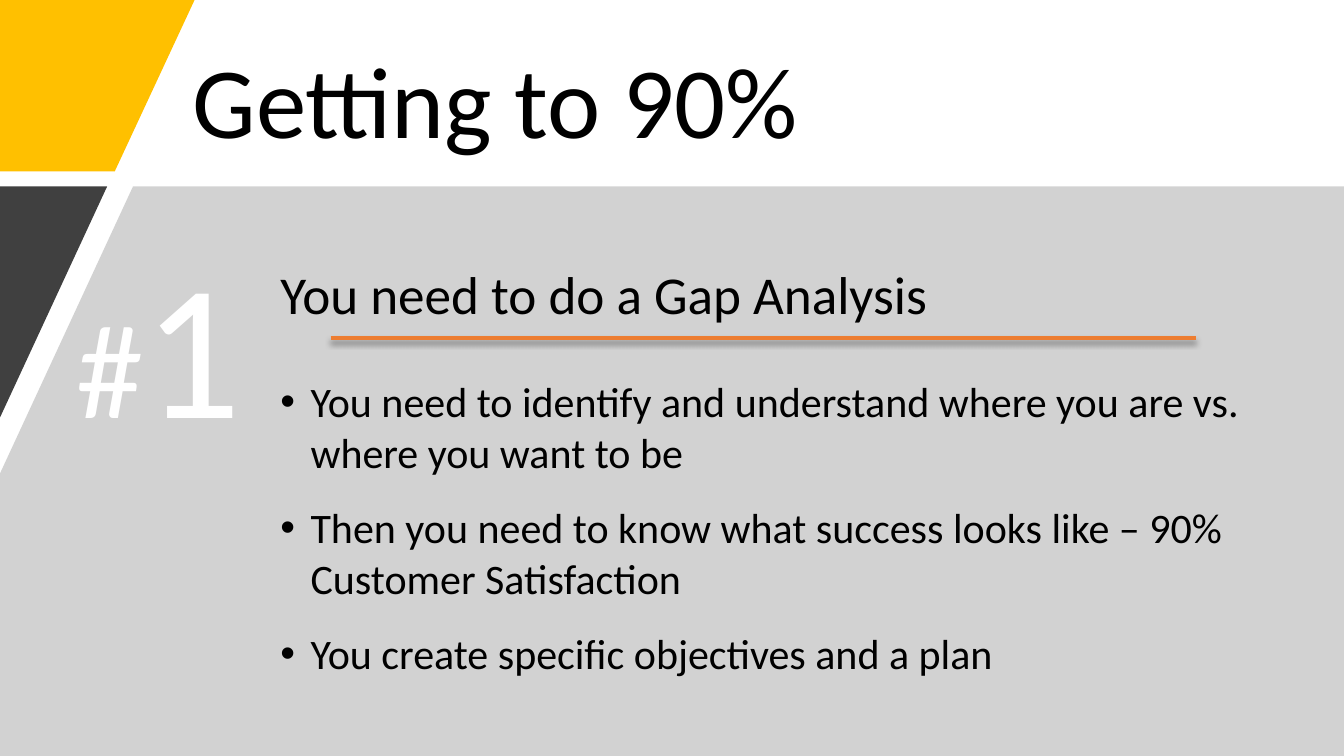
from lxml import etree
from pptx import Presentation
from pptx.dml.color import RGBColor
from pptx.enum.shapes import MSO_CONNECTOR
from pptx.enum.text import MSO_ANCHOR, MSO_AUTO_SIZE, PP_ALIGN
from pptx.oxml import parse_xml
from pptx.oxml.ns import nsdecls, qn
from pptx.util import Pt

STRAIGHT = MSO_CONNECTOR.STRAIGHT
MIDDLE, TOP = MSO_ANCHOR.MIDDLE, MSO_ANCHOR.TOP
NO_AUTOFIT, GROW = MSO_AUTO_SIZE.NONE, MSO_AUTO_SIZE.SHAPE_TO_FIT_TEXT
LEFT = PP_ALIGN.LEFT

BLACK = RGBColor(0x00, 0x00, 0x00)
WHITE = RGBColor(0xFF, 0xFF, 0xFF)
GOLD = RGBColor(0xFF, 0xC0, 0x00)
GRAY = RGBColor(0xA6, 0xA6, 0xA6)
CHARCOAL = RGBColor(0x40, 0x40, 0x40)
ORANGE = RGBColor(0xED, 0x7D, 0x31)
FONT = "Calibri"
WIDTH, HEIGHT = 960, 540

HEADING = "You need to do a Gap Analysis"
BULLETS = [
    "You need to identify and understand where you are vs. where you want to be",
    "Then you need to know what success looks like – 90% Customer Satisfaction",
    "You create specific objectives and a plan",
]


def place(shape, box):
    shape.left, shape.top, shape.width, shape.height = map(Pt, box)


def style_run(run, size, color):
    run.font.name = FONT
    run.font.size = Pt(size)
    run.font.color.rgb = color


def add_polygon(slide, box, corners, color, opacity=None):
    left, top, width, height = box
    points = [(Pt(left + x * width), Pt(top + y * height)) for x, y in corners]
    builder = slide.shapes.build_freeform(*points[0])
    builder.add_line_segments(points[1:], close=True)
    shape = builder.convert_to_shape()
    shape.shadow.inherit = False
    shape.fill.solid()
    shape.fill.fore_color.rgb = color
    shape.line.fill.background()
    if opacity is not None:
        fill_color = shape.fill._xPr.find(qn("a:solidFill"))[0]
        etree.SubElement(fill_color, qn("a:alpha")).set("val", str(opacity * 1000))


def add_background(slide, box):
    left, top, width, height = box
    panel_top = top + 133.2
    panel_height = height - 133.2
    add_polygon(slide, (left, top, 139, 122.4),
                [(0, 0), (1, 0), (0.59, 1), (0, 1)], GOLD)
    add_polygon(slide, (left, panel_top, width, panel_height),
                [(95 / width, 0), (1, 0), (1, 1), (0, 1), (0, 205 / panel_height)],
                GRAY, 50)
    add_polygon(slide, (left, panel_top, 76.5, 165),
                [(0, 0), (1, 0), (0, 1)], CHARCOAL)


def fill_title(slide, box):
    title = slide.shapes.title
    place(title, box)
    frame = title.text_frame
    frame.text = "Getting to 90%"
    frame.auto_size = NO_AUTOFIT
    frame.vertical_anchor = MIDDLE
    paragraph = frame.paragraphs[0]
    paragraph.alignment = LEFT
    paragraph.line_spacing = 0.9
    style_run(paragraph.runs[0], 72, BLACK)


def format_paragraph(paragraph, size, before, bullet=None):
    paragraph.alignment = LEFT
    paragraph.space_before = Pt(before)
    paragraph.space_after = Pt(12)
    style_run(paragraph.runs[0], size, BLACK)
    properties = paragraph._p.get_or_add_pPr()
    indent = Pt(21.6) if bullet else 0
    properties.set("marL", str(indent))
    properties.set("indent", str(-indent))
    if bullet:
        etree.SubElement(properties, qn("a:buFont")).set("typeface", "Arial")
        etree.SubElement(properties, qn("a:buChar")).set("char", bullet)
    else:
        etree.SubElement(properties, qn("a:buNone"))


def fill_body(slide, box):
    body = slide.placeholders[1]
    place(body, box)
    slide.shapes._spTree.append(body._element)
    frame = body.text_frame
    frame.text = "\n".join([HEADING, *BULLETS])
    frame.auto_size = NO_AUTOFIT
    frame.vertical_anchor = TOP
    heading, *bullets = frame.paragraphs
    heading.line_spacing = 1.12
    format_paragraph(heading, 38, 0)
    for index, paragraph in enumerate(bullets):
        format_paragraph(paragraph, 30, 6 if index else 24, "•")


def add_number(slide, box):
    number = slide.shapes.add_textbox(*map(Pt, box))
    frame = number.text_frame
    frame.word_wrap = False
    frame.auto_size = GROW
    for text, size in (("#", 96), ("1", 138)):
        run = frame.paragraphs[0].add_run()
        run.text = text
        style_run(run, size, WHITE)


def add_underline(slide, left, top, width):
    underline = slide.shapes.add_connector(
        STRAIGHT, Pt(left), Pt(top), Pt(left + width), Pt(top))
    underline.line.color.rgb = ORANGE
    underline.line.width = Pt(3)
    underline._element.spPr.append(parse_xml(
        f'<a:effectLst {nsdecls("a")}>'
        f'<a:outerShdw blurRad="{Pt(4)}" dist="{Pt(3)}" dir="5400000" rotWithShape="0">'
        '<a:srgbClr val="000000"><a:alpha val="40000"/></a:srgbClr>'
        '</a:outerShdw></a:effectLst>'))


def main():
    presentation = Presentation()
    presentation.slide_width = Pt(WIDTH)
    presentation.slide_height = Pt(HEIGHT)
    slide = presentation.slides.add_slide(presentation.slide_layouts[1])
    fill_title(slide, (130.3, 28.8, 737.3, 93.6))
    add_background(slide, (0, 0, WIDTH, HEIGHT))
    fill_body(slide, (193, 177.8, 740.9, 351.4))
    add_number(slide, (47.5, 157.7, 133.9, 174.2))
    add_underline(slide, 236.2, 241.2, 617.8)
    presentation.save("out.pptx")


if __name__ == "__main__":
    main()
